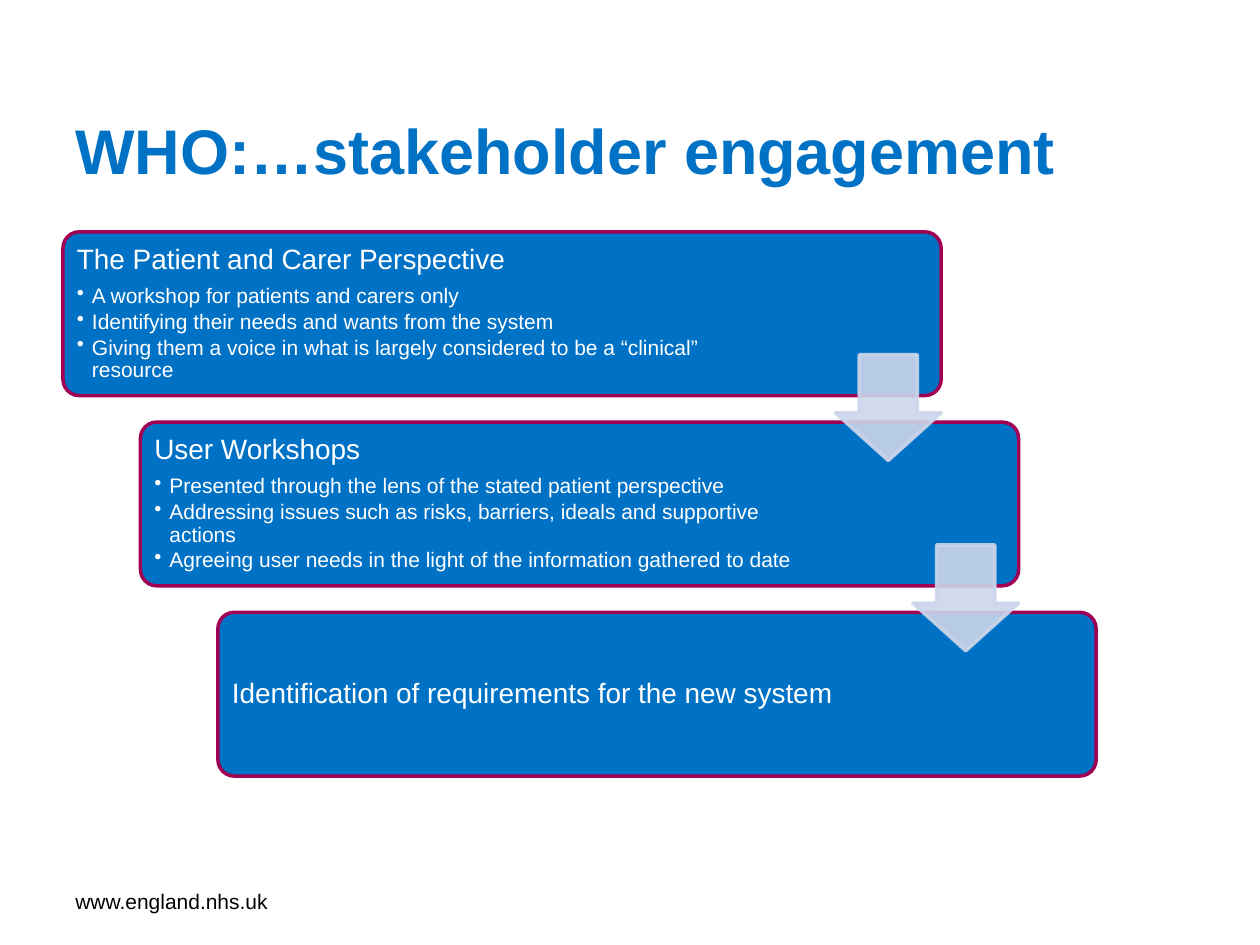
from dataclasses import dataclass

from lxml import etree
from pptx import Presentation
from pptx import util as u
from pptx.dml.color import RGBColor
from pptx.enum import shapes, text
from pptx.oxml.ns import qn

BLUE, PLUM, PALE, WHITE, BLACK = "0072C6", "A00054", "CCD5EA", "FFFFFF", "000000"
FONT = "Arial"

# Staircase grid, in inches: each stage moves one step right and down
LEFT, TOP = 0.5, 1.84
STEP_X, STEP_Y = 0.615, 1.51
STAGE_W, STAGE_H = 6.97, 1.3
PAD = 0.04
ARROW = 0.84


@dataclass
class Stage:
    heading: str
    text_width: float
    points: tuple[str, ...] = ()


STAGES = [
    Stage("The Patient and Carer Perspective", 5.57, (
        "A workshop for patients and carers only",
        "Identifying their needs and wants from the system",
        "Giving them a voice in what is largely considered to be a “clinical” resource",
    )),
    Stage("User Workshops", 5.43, (
        "Presented through the lens of the stated patient perspective",
        "Addressing issues such as risks, barriers, ideals and supportive actions",
        "Agreeing user needs in the light of the information gathered to date",
    )),
    Stage("Identification of requirements for the new system", 5.43),
]


def color(value: str) -> RGBColor:
    return RGBColor.from_string(value)


def inches(*lengths: float) -> list:
    return [u.Inches(length) for length in lengths]


def style_font(para, size: float, ink: str, bold: bool = False) -> None:
    font = para.font
    font.name, font.size, font.bold = FONT, u.Pt(size), bold
    font.color.rgb = color(ink)


def add_text(page, left: float, top: float, width: float, height: float):
    frame = page.shapes.add_textbox(*inches(left, top, width, height)).text_frame
    frame.word_wrap = True
    frame.vertical_anchor = text.MSO_ANCHOR.MIDDLE
    return frame


def add_label(page, wording: str, place: tuple, size: float, ink: str, bold: bool = False) -> None:
    frame = add_text(page, *place)
    frame.text = wording
    style_font(frame.paragraphs[0], size, ink, bold)


def add_preset(page, preset, place: tuple, adjustments: tuple, fill: str, line: str):
    shape = page.shapes.add_shape(preset, *inches(*place))
    for index, value in enumerate(adjustments):
        shape.adjustments[index] = value
    shape.shadow.inherit = False
    shape.fill.solid()
    shape.fill.fore_color.rgb = color(fill)
    shape.line.color.rgb = color(line)
    shape.line.width = u.Pt(2)
    return shape


def add_bullet(para) -> None:
    props = para._p.get_or_add_pPr()
    props.set("marL", str(u.Inches(0.12)))
    props.set("indent", str(-u.Inches(0.12)))
    etree.SubElement(props, qn("a:buChar")).set("char", "•")


def add_stage(page, stage: Stage, step: int) -> None:
    left, top = LEFT + step * STEP_X, TOP + step * STEP_Y
    add_preset(page, shapes.MSO_SHAPE.ROUNDED_RECTANGLE,
               (left, top, STAGE_W, STAGE_H), (0.1,), BLUE, PLUM)
    frame = add_text(page, left + PAD, top + PAD, stage.text_width, STAGE_H - 2 * PAD)
    frame.margin_left = frame.margin_right = u.Inches(0.07)
    frame.margin_top = frame.margin_bottom = u.Inches(0.07)
    frame.text = "\n".join((stage.heading, *stage.points))
    for index, para in enumerate(frame.paragraphs):
        size, gap = (12, 0.15) if index else (16, 0.35)
        if index:
            para.level = 1
            add_bullet(para)
        para.line_spacing = 0.9
        para.space_after = u.Pt(size * gap)
        style_font(para, size, WHITE)


def add_arrow(page, step: int) -> None:
    left = LEFT + step * STEP_X + STAGE_W - ARROW
    top = TOP + step * STEP_Y + 0.75 * STAGE_H
    arrow = add_preset(page, shapes.MSO_SHAPE.DOWN_ARROW,
                       (left, top, ARROW, ARROW), (0.55, 0.45), PALE, PALE)
    # 90 % opacity on both fill and outline
    for tint in arrow._element.spPr.iter(qn("a:srgbClr")):
        etree.SubElement(tint, qn("a:alpha")).set("val", "90000")


def main() -> None:
    deck = Presentation()
    deck.slide_width, deck.slide_height = inches(10, 7.5)
    page = deck.slides.add_slide(deck.slide_layouts[6])

    # Footer address
    add_label(page, "www.england.nhs.uk", (LEFT, 6.95, 2.33, 0.4), 12, BLACK)

    # Stages, then the arrows that lead from each one to the next
    for step, stage in enumerate(STAGES):
        add_stage(page, stage, step)
    for step in range(len(STAGES) - 1):
        add_arrow(page, step)

    # Title
    add_label(page, "WHO:…stakeholder engagement", (LEFT, 0.82, 8.05, 0.73), 36, BLUE, bold=True)

    deck.save("out.pptx")


if __name__ == "__main__":
    main()
